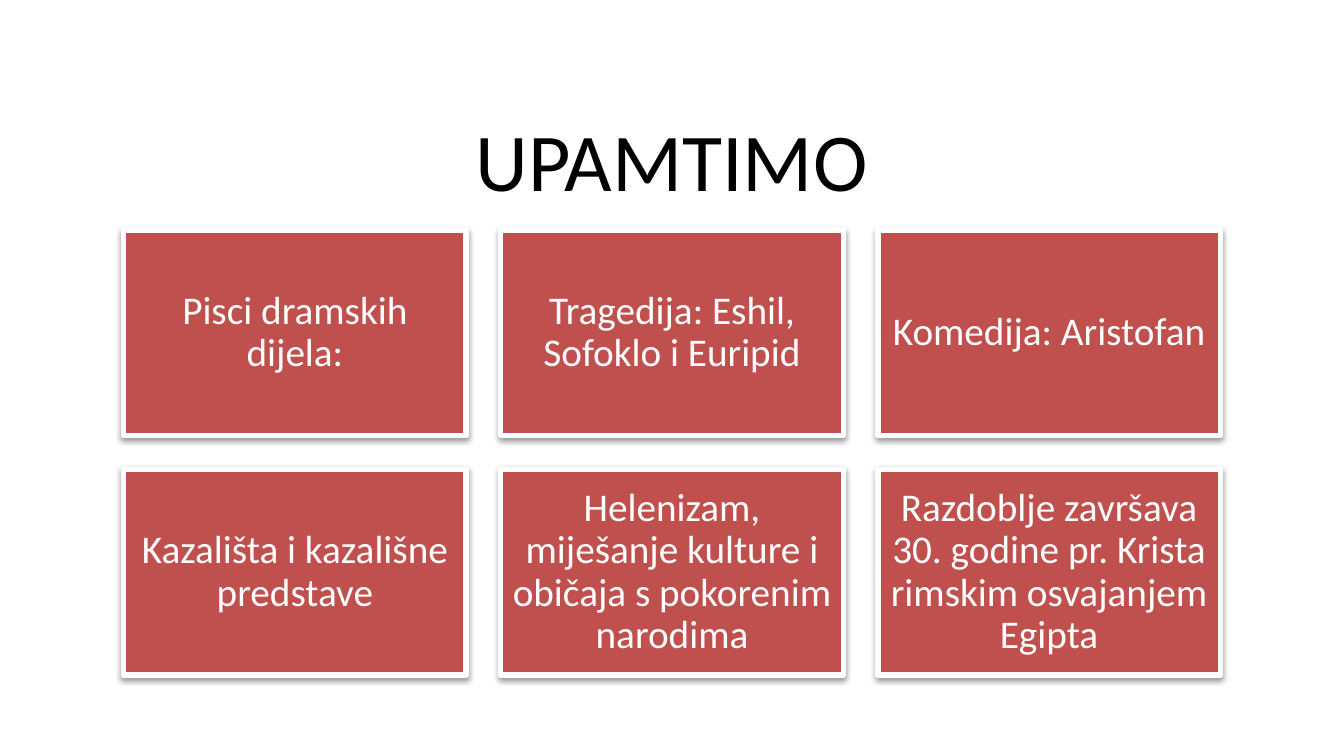
from dataclasses import dataclass

import lxml.etree
import pptx
import pptx.dml.color
import pptx.enum.shapes
import pptx.enum.text
import pptx.oxml.ns
import pptx.util

Pt = pptx.util.Pt
COLORS = {"title": "000000", "card": "C0504D", "text": "FFFFFF",
          "border": "FFFFFF", "shadow": "000000"}
FONT = "Calibri"

# Card grid, in points
COLUMNS = 3
LEFT, TOP = 66.2, 123.1
CARD_W, CARD_H = 183.6, 110.2
STEP_X, STEP_Y = 202, 128.4


@dataclass
class Card:
    text: str
    column: int
    row: int


CARD_TEXTS = [
    "Pisci dramskih dijela:",
    "Tragedija: Eshil, Sofoklo i Euripid",
    "Komedija: Aristofan",
    "Kazališta i kazališne predstave",
    "Helenizam, miješanje kulture i običaja s pokorenim narodima",
    "Razdoblje završava 30. godine pr. Krista rimskim osvajanjem Egipta",
]
CARDS = [Card(text, i % COLUMNS, i // COLUMNS)
         for i, text in enumerate(CARD_TEXTS)]


def rgb(name: str) -> pptx.dml.color.RGBColor:
    return pptx.dml.color.RGBColor.from_string(COLORS[name])


def write_text(sp, text: str, size: float, color: str, inset: float) -> None:
    """Fill a shape with one centred paragraph."""
    tf = sp.text_frame
    tf.word_wrap = True
    tf.vertical_anchor = pptx.enum.text.MSO_ANCHOR.MIDDLE
    tf.margin_left = tf.margin_right = Pt(inset)
    tf.margin_top = tf.margin_bottom = Pt(inset)
    p = tf.paragraphs[0]
    p.alignment = pptx.enum.text.PP_ALIGN.CENTER
    p.line_spacing = 0.9
    r = p.add_run()
    r.text = text
    r.font.name = FONT
    r.font.size = Pt(size)
    r.font.color.rgb = rgb(color)


def add_shadow(sp) -> None:
    """Give a shape a soft shadow straight below it."""
    sp.shadow.inherit = False
    qn = pptx.oxml.ns.qn
    effects = sp._element.spPr.find(qn("a:effectLst"))
    shadow = lxml.etree.SubElement(
        effects, qn("a:outerShdw"), blurRad=str(Pt(3.1)), dist=str(Pt(1.6)),
        dir="5400000", rotWithShape="0")
    color = lxml.etree.SubElement(shadow, qn("a:srgbClr"), val=COLORS["shadow"])
    lxml.etree.SubElement(color, qn("a:alpha"), val="38000")


def add_card(s, card: Card) -> None:
    sp = s.shapes.add_shape(
        pptx.enum.shapes.MSO_SHAPE.RECTANGLE,
        Pt(LEFT + card.column * STEP_X), Pt(TOP + card.row * STEP_Y),
        Pt(CARD_W), Pt(CARD_H))
    sp.fill.solid()
    sp.fill.fore_color.rgb = rgb("card")
    sp.line.color.rgb = rgb("border")
    sp.line.width = Pt(3)
    add_shadow(sp)
    write_text(sp, card.text, 21, "text", 6.3)


def main() -> None:
    prs = pptx.Presentation()
    prs.slide_width, prs.slide_height = Pt(720), Pt(405)
    s = prs.slides.add_slide(prs.slide_layouts[6])

    # Title
    title = s.shapes.add_textbox(Pt(36), Pt(60.5), Pt(648), Pt(56))
    write_text(title, "UPAMTIMO", 44, "title", 3.6)

    # Cards
    for card in CARDS:
        add_card(s, card)

    prs.save("out.pptx")


if __name__ == "__main__":
    main()
